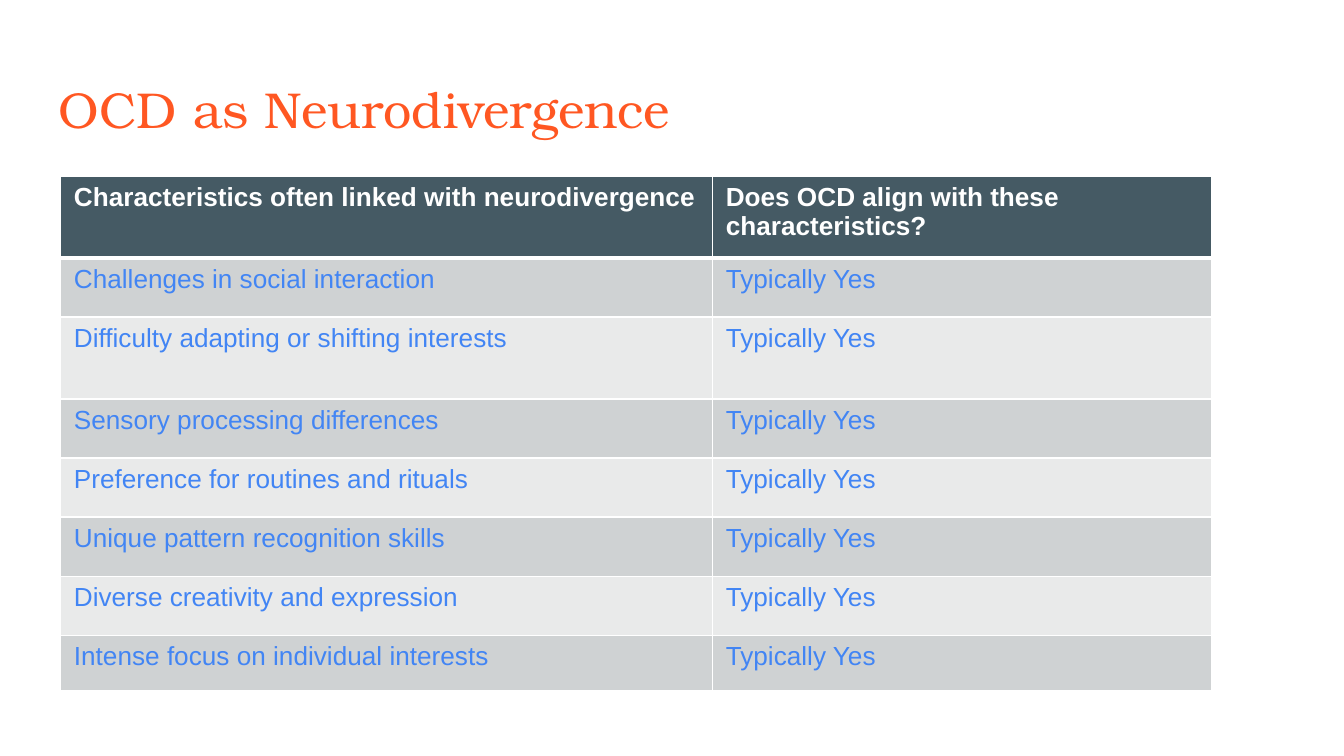
import pptx
import pptx.dml.color
import pptx.enum.text
import pptx.oxml.ns
import pptx.util
from lxml import etree

Inches = pptx.util.Inches

SLIDE_WIDTH = 10
SLIDE_HEIGHT = SLIDE_WIDTH * 9 / 16
COLORS = {
    "title": "FF5722",
    "header": "455A64",
    "odd_row": "CFD2D3",
    "even_row": "E9EAEA",
    "body": "4285F4",
    "white": "FFFFFF",
}
CHARACTERISTICS = [
    "Challenges in social interaction",
    "Difficulty adapting or shifting interests",
    "Sensory processing differences",
    "Preference for routines and rituals",
    "Unique pattern recognition skills",
    "Diverse creativity and expression",
    "Intense focus on individual interests",
]
HEADINGS = (
    "Characteristics often linked with neurodivergence",
    "Does OCD align with these characteristics?",
)
ANSWER = "Typically Yes"
COLUMN_WIDTHS = [4.85, 3.72]
ROW_HEIGHTS = [0.61, 0.44, 0.61, 0.44, 0.44, 0.44, 0.44, 0.41]


def rgb(name):
    """Return the named colour."""
    return pptx.dml.color.RGBColor.from_string(COLORS[name])


def write(frame, text, *, size=14, color="body", font="Arial", bold=False):
    """Put formatted text into a text frame."""
    frame.word_wrap = True
    run = frame.paragraphs[0].add_run()
    run.text = text
    run.font.size = pptx.util.Pt(size)
    run.font.name = font
    run.font.bold = bold
    run.font.color.rgb = rgb(color)


def add_borders(cell, **widths):
    """Draw white borders of the given point widths around a cell."""
    properties = cell._tc.get_or_add_tcPr()
    qn = pptx.oxml.ns.qn
    for side in "LRTB":
        line = etree.SubElement(properties, qn(f"a:ln{side}"))
        line.set("w", str(pptx.util.Pt(widths.get(side, 1))))
        fill = etree.SubElement(line, qn("a:solidFill"))
        etree.SubElement(fill, qn("a:srgbClr")).set("val", COLORS["white"])


def add_title(slide, left, top, width, height):
    """Place the slide title in its box."""
    title = slide.shapes.add_textbox(
        Inches(left), Inches(top), Inches(width), Inches(height)
    ).text_frame
    title.margin_left = title.margin_right = Inches(0.1)
    title.margin_top = title.margin_bottom = Inches(0.1)
    title.vertical_anchor = pptx.enum.text.MSO_ANCHOR.MIDDLE
    write(title, "OCD as Neurodivergence", size=27, color="title", font="TeX Gyre Bonum")


def add_comparison(slide, left, top, width, height):
    """Place the table of characteristics, scaled to its box."""
    entries = [HEADINGS] + [(trait, ANSWER) for trait in CHARACTERISTICS]
    comparison = slide.shapes.add_table(
        len(entries), len(HEADINGS),
        Inches(left), Inches(top), Inches(width), Inches(height),
    ).table
    for column, share in zip(comparison.columns, COLUMN_WIDTHS):
        column.width = Inches(width * share / sum(COLUMN_WIDTHS))
    for row, share in zip(comparison.rows, ROW_HEIGHTS):
        row.height = Inches(height * share / sum(ROW_HEIGHTS))

    for index, entry in enumerate(entries):
        is_header = index == 0
        band = "header" if is_header else "odd_row" if index % 2 else "even_row"
        for cell, text in zip(comparison.rows[index].cells, entry):
            add_borders(cell, T=3 if index == 1 else 1, B=3 if is_header else 1)
            cell.fill.solid()
            cell.fill.fore_color.rgb = rgb(band)
            write(
                cell.text_frame, text,
                color="white" if is_header else "body", bold=is_header,
            )


def main():
    """Build and save the presentation."""
    presentation = pptx.Presentation()
    presentation.slide_width = Inches(SLIDE_WIDTH)
    presentation.slide_height = Inches(SLIDE_HEIGHT)
    slide = presentation.slides.add_slide(presentation.slide_layouts[6])
    add_title(slide, 0.34, 0.49, 9.32, 0.63)
    add_comparison(slide, 0.45, 1.31, 8.57, 3.83)
    presentation.save("out.pptx")


if __name__ == "__main__":
    main()
